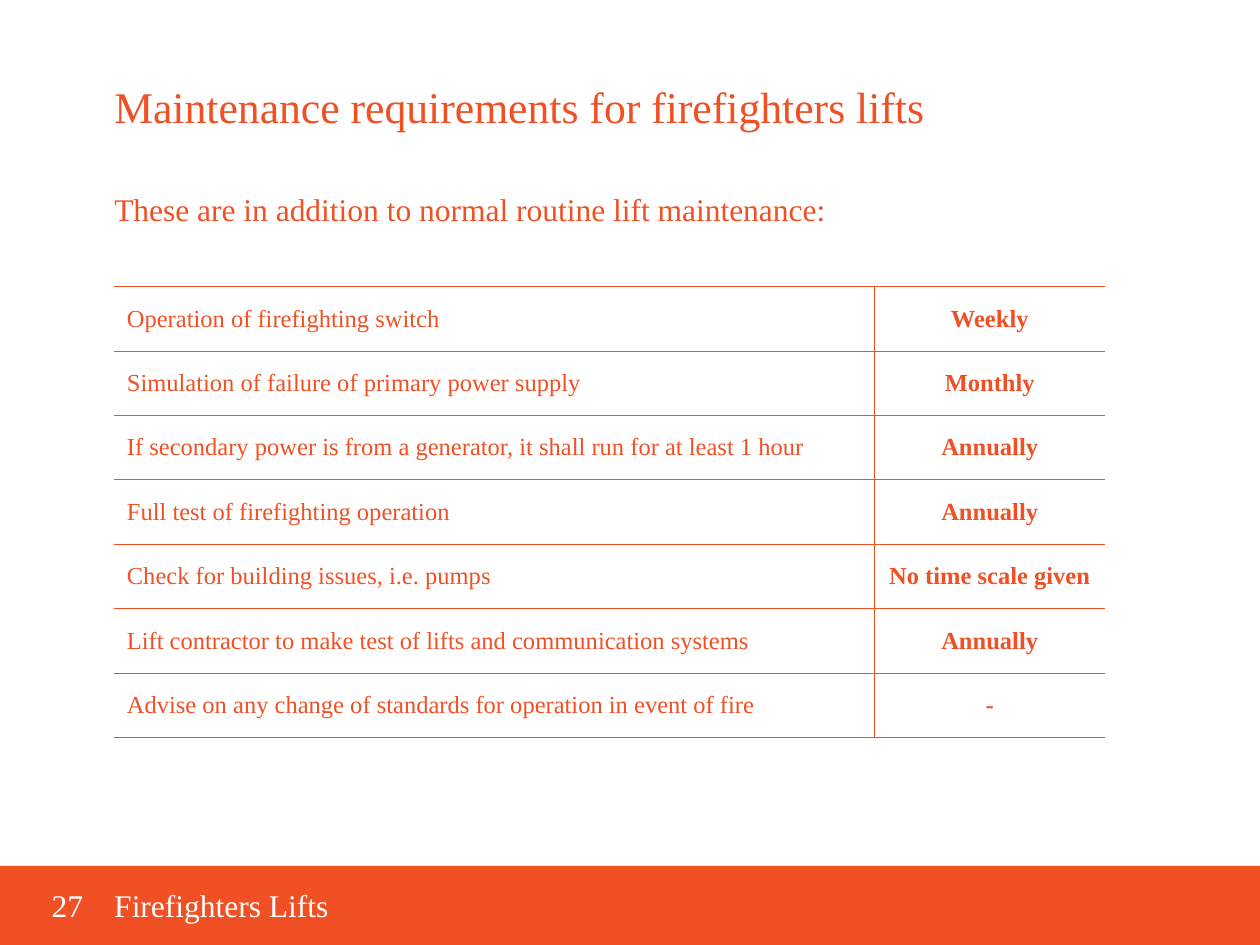
from dataclasses import dataclass

from lxml.etree import SubElement
from pptx import Presentation
from pptx.dml.color import RGBColor
from pptx.enum.shapes import MSO_SHAPE
from pptx.enum.text import MSO_ANCHOR, PP_ALIGN
from pptx.oxml.ns import qn
from pptx.util import Pt


@dataclass(frozen=True)
class Theme:
    fire: str = "F05023"
    white: str = "FFFFFF"
    font: str = "Times New Roman"
    title: int = 25
    lead: int = 18
    cell: int = 14
    rule: float = 0.5


theme = Theme()


def write(frame, text, size, color=theme.fire, bold=False, align=PP_ALIGN.LEFT, lead=None):
    para = frame.paragraphs[0]
    para.alignment = align
    para.line_spacing = lead
    run = para.add_run()
    run.text = text
    font = run.font
    font.name, font.size, font.bold = theme.font, Pt(size), bold
    font.color.rgb = RGBColor.from_string(color)


def border(cell, sides):
    """Rule the sides named by the letters L, R, T and B; clear the others."""
    props = cell._tc.get_or_add_tcPr()
    for side in "LRTB":
        line = SubElement(props, qn(f"a:ln{side}"), w=str(Pt(theme.rule)))
        if side in sides:
            fill = SubElement(line, qn("a:solidFill"))
            SubElement(fill, qn("a:srgbClr"), val=theme.fire)
        else:
            SubElement(line, qn("a:noFill"))


deck = Presentation()
deck.slide_width, deck.slide_height = Pt(720), Pt(540)
slide = deck.slides.add_slide(deck.slide_layouts[6])
shapes = slide.shapes
left = 65.3

# Footer band
band = shapes.add_shape(MSO_SHAPE.RECTANGLE, 0, Pt(494.8), Pt(720), Pt(45.2))
band.shadow.inherit = False
band.fill.solid()
band.fill.fore_color.rgb = RGBColor.from_string(theme.fire)
band.line.fill.background()

# Page number, footer, title and lead line
labels = [
    ("27", (29.6, 507.6, 24.5, 27.4), theme.lead, theme.white, Pt(20)),
    ("Firefighters Lifts", (left, 507.6, 453.6, 27.4), theme.lead, theme.white, Pt(20)),
    ("Maintenance requirements for firefighters lifts",
     (left, 35.3, 591, 54), theme.title, theme.fire, Pt(40)),
    ("These are in addition to normal routine lift maintenance:",
     (left, 97.9, 627, 54), theme.lead, theme.fire, 1.5),
]
for text, place, size, color, lead in labels:
    frame = shapes.add_textbox(*map(Pt, place)).text_frame
    frame.word_wrap = True
    frame.margin_left = frame.margin_right = frame.margin_top = frame.margin_bottom = 0
    write(frame, text, size, color=color, lead=lead)

# Maintenance tasks
tasks = [
    ("Operation of firefighting switch", "Weekly"),
    ("Simulation of failure of primary power supply", "Monthly"),
    ("If secondary power is from a generator, it shall run for at least 1 hour", "Annually"),
    ("Full test of firefighting operation", "Annually"),
    ("Check for building issues, i.e. pumps", "No time scale given"),
    ("Lift contractor to make test of lifts and communication systems", "Annually"),
    ("Advise on any change of standards for operation in event of fire", "-"),
]
widths = (434.4, 131.8)
height = 36.83
table = shapes.add_table(len(tasks), 2, Pt(left), Pt(163.7),
                         Pt(sum(widths)), Pt(height * len(tasks))).table
table.first_row = table.horz_banding = False
for col, width in zip(table.columns, widths):
    col.width = Pt(width)

formats = [("RTB", False, PP_ALIGN.LEFT), ("LTB", True, PP_ALIGN.CENTER)]
for row, task in zip(table.rows, tasks):
    row.height = Pt(height)
    for cell, text, (sides, bold, align) in zip(row.cells, task, formats):
        border(cell, sides)
        cell.fill.background()
        cell.vertical_anchor = MSO_ANCHOR.MIDDLE
        write(cell.text_frame, text, theme.cell, bold=bold, align=align)

deck.save("out.pptx")
